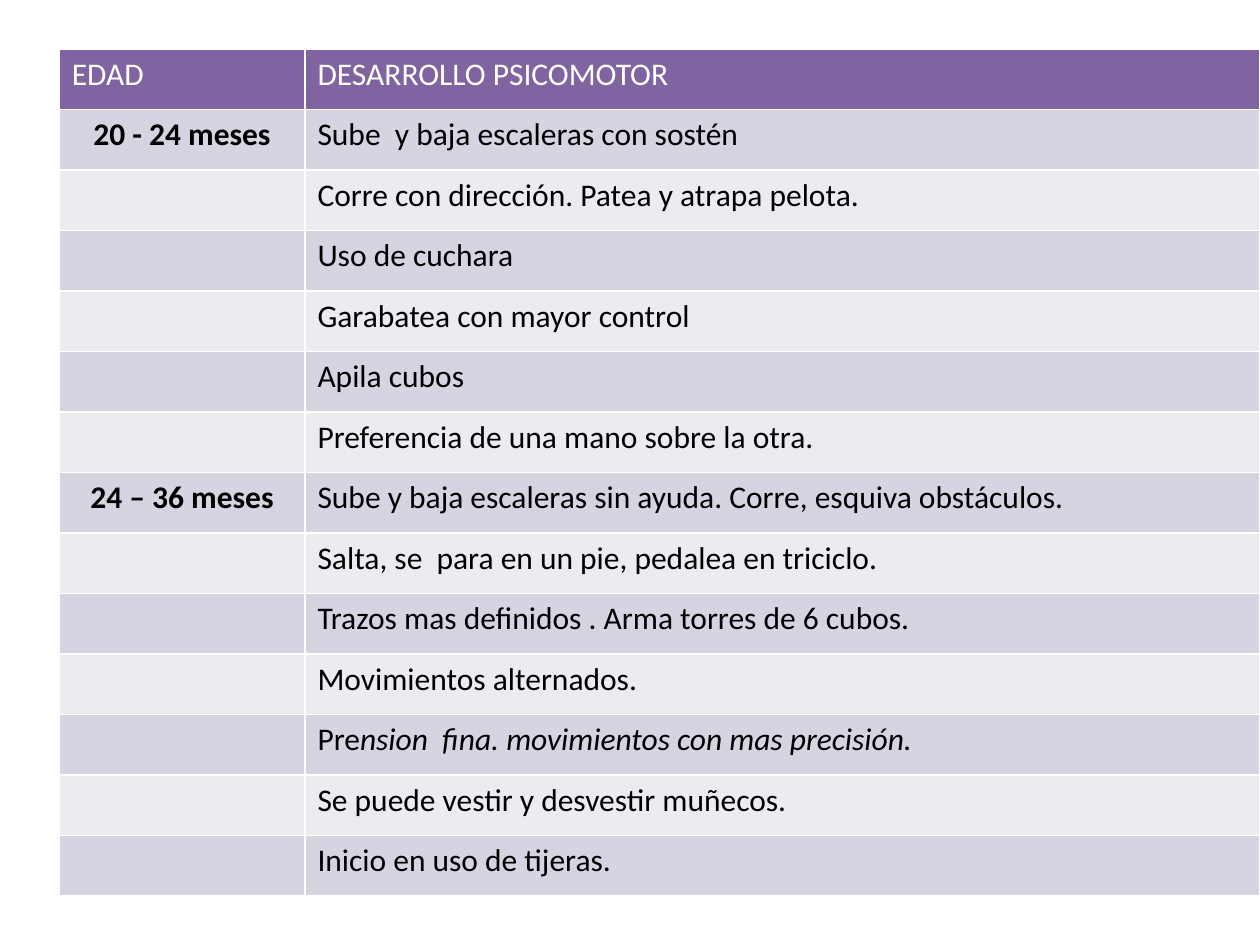
"""Builds a slide with a table of psychomotor growth by age."""
from dataclasses import dataclass

from pptx import Presentation
from pptx.dml.color import RGBColor
from pptx.enum.text import PP_ALIGN
from pptx.util import Inches, Pt

LEFT, CENTER = PP_ALIGN.LEFT, PP_ALIGN.CENTER
WIDE, HIGH = Inches(10), Inches(7.5)
SIDE, TOP, AGE, ROW = 0.047, 0.052, 0.195, 0.064
FONT, SIZE = "Calibri", 18
HEX = {"head": "8064A2", "odd": "D8D3E0", "even": "EDEAF0",
       "light": "FFFFFF", "dark": "000000"}


@dataclass(frozen=True)
class Stage:
    age: str
    skills: tuple[str, ...]


STAGES = (
    Stage("20 - 24 meses", (
        "Sube  y baja escaleras con sostén",
        "Corre con dirección. Patea y atrapa pelota.",
        "Uso de cuchara",
        "Garabatea con mayor control",
        "Apila cubos",
        "Preferencia de una mano sobre la otra.",
    )),
    Stage("24 – 36 meses", (
        "Sube y baja escaleras sin ayuda. Corre, esquiva obstáculos.",
        "Salta, se  para en un pie, pedalea en triciclo.",
        "Trazos mas definidos . Arma torres de 6 cubos.",
        "Movimientos alternados.",
        "Pre|nsion  fina. movimientos con mas precisión.",
        "Se puede vestir y desvestir muñecos.",
        "Inicio en uso de tijeras.",
    )),
)


def tint(name: str) -> RGBColor:
    """Look up a named colour."""
    return RGBColor.from_string(HEX[name])


def write(cell, text: str, *, color: str = "dark", bold: bool = False,
          align=LEFT) -> None:
    """Fill a cell with text; what follows a bar is italic."""
    para = cell.text_frame.paragraphs[0]
    para.alignment = align
    for slant, part in enumerate(text.split("|")):
        run = para.add_run()
        run.text = part
        font = run.font
        font.name, font.size = FONT, Pt(SIZE)
        font.bold, font.italic = bold, bool(slant)
        font.color.rgb = tint(color)


def shade(table) -> None:
    """Colour the header and band the rows below it."""
    for row, line in enumerate(table.rows):
        name = "head" if row == 0 else "odd" if row % 2 else "even"
        for cell in line.cells:
            cell.fill.solid()
            cell.fill.fore_color.rgb = tint(name)


def draw(slide, stages: tuple[Stage, ...]) -> None:
    """Lay out the table and write each stage."""
    count = 1 + sum(len(stage.skills) for stage in stages)
    frame = slide.shapes.add_table(
        count, 2, int(WIDE * SIDE), int(HIGH * TOP),
        int(WIDE * (1 - SIDE)), int(HIGH * ROW * count))
    table = frame.table
    table.columns[0].width = int(WIDE * AGE)
    table.columns[1].width = int(WIDE * (1 - SIDE - AGE))
    shade(table)
    for col, label in enumerate(("EDAD", "DESARROLLO PSICOMOTOR")):
        write(table.cell(0, col), label, color="light")
    row = 1
    for stage in stages:
        write(table.cell(row, 0), stage.age, bold=True, align=CENTER)
        for skill in stage.skills:
            write(table.cell(row, 1), skill)
            row += 1


def main() -> None:
    """Build and save the deck."""
    deck = Presentation()
    deck.slide_width, deck.slide_height = WIDE, HIGH
    draw(deck.slides.add_slide(deck.slide_layouts[6]), STAGES)
    deck.save("out.pptx")


if __name__ == "__main__":
    main()
